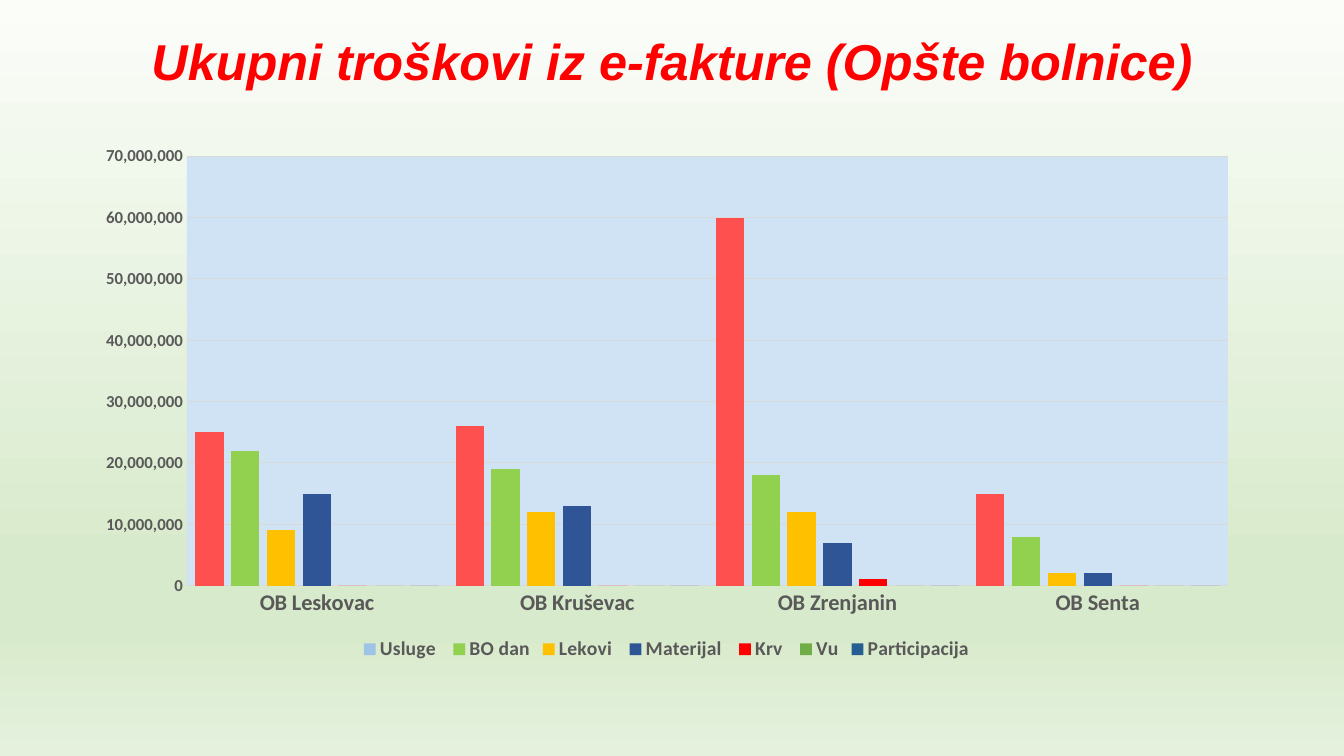
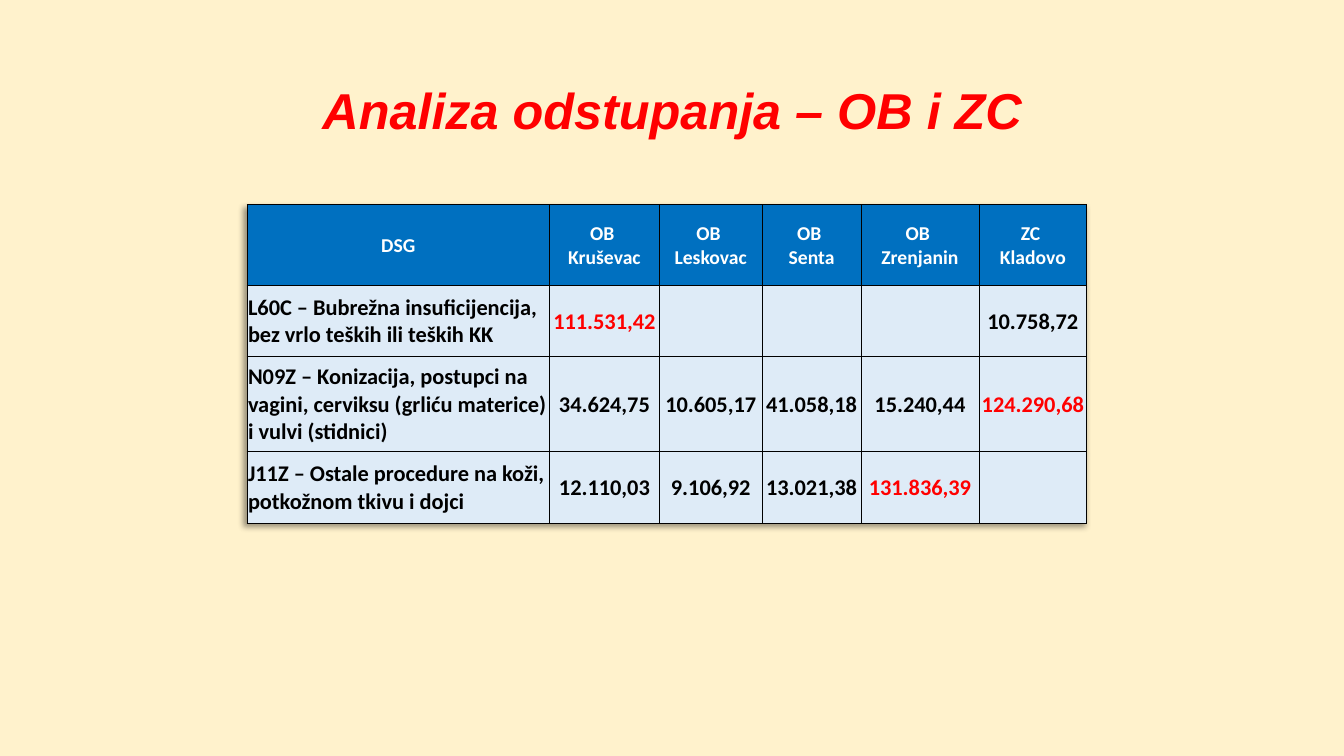
from copy import deepcopy

from pptx import Presentation
from pptx.chart.data import CategoryChartData
from pptx.dml.color import RGBColor
from pptx.enum import chart as charts, text as texts
from pptx.oxml import parse_xml
from pptx.oxml.ns import nsdecls, qn
from pptx.util import Inches, Pt

RED = RGBColor(0xFF, 0x00, 0x00)
WHITE = RGBColor(0xFF, 0xFF, 0xFF)
BLACK = RGBColor(0x00, 0x00, 0x00)
GREY = RGBColor(0x59, 0x59, 0x59)
GRID = RGBColor(0xD9, 0xD9, 0xD9)
CORAL = RGBColor(0xFF, 0x50, 0x50)
PLOT_BLUE = RGBColor(0xD0, 0xE3, 0xF4)
CREAM = RGBColor(0xFF, 0xF2, 0xCC)
HEADER_BLUE = RGBColor(0x00, 0x70, 0xC0)
CELL_BLUE = RGBColor(0xDE, 0xEB, 0xF7)
PALE_GREEN = RGBColor(0xD8, 0xEA, 0xCC)
GREEN_STOPS = [
    (0, RGBColor(0xFB, 0xFD, 0xF9)),
    (0.74, PALE_GREEN),
    (0.83, PALE_GREEN),
    (1, RGBColor(0xE5, 0xF1, 0xDD)),
]
CENTER = texts.PP_ALIGN.CENTER


def write(frame, content, size, color, font="Calibri", italic=False, align=CENTER, spacing=None):
    """Fill a text frame with bold text, one paragraph for each line."""
    frame.word_wrap = True
    frame.vertical_anchor = texts.MSO_ANCHOR.MIDDLE
    for number, line in enumerate(content.split("\n")):
        para = frame.add_paragraph() if number else frame.paragraphs[0]
        para.alignment = align
        para.line_spacing = spacing
        span = para.add_run()
        span.text = line
        span.font.name, span.font.size = font, Pt(size)
        span.font.bold, span.font.italic = True, italic
        span.font.color.rgb = color


def add_title(page, content, top, height):
    box = page.shapes.add_textbox(Inches(0.92), Inches(top), Inches(11.5), Inches(height))
    write(box.text_frame, content, 36, RED, font="Arial", italic=True, spacing=0.9)


deck = Presentation()
deck.slide_width, deck.slide_height = Inches(13.33), Inches(7.5)
blank = deck.slide_layouts[6]

# Costs by hospital
page = deck.slides.add_slide(blank)
backdrop = page.background.fill
backdrop.gradient()
backdrop.gradient_angle = 270
stop_list = page._element.find(".//" + qn("a:gsLst"))
for _ in range(len(GREEN_STOPS) - len(stop_list)):
    stop_list.append(deepcopy(stop_list[0]))
for stop, (position, color) in zip(backdrop.gradient_stops, GREEN_STOPS):
    stop.position = position
    stop.color.rgb = color
add_title(page, "Ukupni troškovi iz e-fakture (Opšte bolnice)", 0.11, 1.05)

MILLION = 1_000_000
COSTS = [
    ("Usluge ", "9DC3E6", (25, 26, 60, 15)),
    ("BO dan", "92D050", (22, 19, 18, 8)),
    ("Lekovi ", "FFC000", (9, 12, 12, 2)),
    ("Materijal ", "2F5597", (15, 13, 7, 2)),
    ("Krv ", "FF0000", (0, 0, 1, 0)),
    ("Vu", "70AD47", (0, 0, 0, 0)),
    ("Participacija", "255E91", (0, 0, 0, 0)),
]
data = CategoryChartData(number_format="#,##0")
data.categories = ["OB Leskovac", "OB Kruševac", "OB Zrenjanin", "OB Senta"]
for name, _, amounts in COSTS:
    data.add_series(name, [amount * MILLION for amount in amounts])
chart = page.shapes.add_chart(
    charts.XL_CHART_TYPE.COLUMN_CLUSTERED,
    Inches(0.81), Inches(1.34), Inches(11.6), Inches(5.26), data,
).chart
chart.has_title = False
chart.font.name, chart.font.size = "Calibri", Pt(10)
chart.has_legend = True
chart.legend.position = charts.XL_LEGEND_POSITION.BOTTOM
chart.legend.include_in_layout = False

for part, size in ((chart.category_axis.tick_labels, 16),
                   (chart.value_axis.tick_labels, 12),
                   (chart.legend, 14)):
    part.font.name, part.font.size, part.font.bold = "Calibri", Pt(size), True
    part.font.color.rgb = GREY
for axis in (chart.category_axis, chart.value_axis):
    axis.major_tick_mark = axis.minor_tick_mark = charts.XL_TICK_MARK.NONE
chart.value_axis.minimum_scale = 0
chart.value_axis.maximum_scale = 70 * MILLION
chart.value_axis.major_unit = 10 * MILLION
chart.value_axis.tick_labels.number_format = "#,##0"
chart.value_axis.tick_labels.number_format_is_linked = False
chart.value_axis.format.line.fill.background()
for line in (chart.category_axis.format.line, chart.value_axis.major_gridlines.format.line):
    line.color.rgb = GRID
    line.width = Pt(0.75)

plot = chart.plots[0]
plot.gap_width, plot.overlap = 60, -27
plot.vary_by_categories = False
for series, (_, color, _) in zip(plot.series, COSTS):
    series.invert_if_negative = False
    series.format.fill.solid()
    series.format.fill.fore_color.rgb = RGBColor.from_string(color)
for index in range(len(data.categories)):
    fill = plot.series[0].points[index].format.fill
    fill.solid()
    fill.fore_color.rgb = CORAL

plot_area = chart._chartSpace.chart.plotArea
for layout in plot_area.findall(qn("c:layout")):
    plot_area.remove(layout)
plot_area.insert(0, parse_xml(
    f'<c:layout {nsdecls("c")}><c:manualLayout><c:layoutTarget val="inner"/>'
    '<c:xMode val="edge"/><c:yMode val="edge"/><c:x val="0.09"/><c:y val="0.04"/>'
    '<c:w val="0.89"/><c:h val="0.81"/></c:manualLayout></c:layout>'))
plot_area.append(parse_xml(
    f'<c:spPr {nsdecls("c", "a")}><a:solidFill><a:srgbClr val="{PLOT_BLUE}"/>'
    '</a:solidFill></c:spPr>'))

# Deviations by diagnosis group
page = deck.slides.add_slide(blank)
page.background.fill.solid()
page.background.fill.fore_color.rgb = CREAM
add_title(page, "Analiza odstupanja – OB i ZC", 0.4, 1.45)

ROWS = [
    ("DSG", "OB \nKruševac", "OB \nLeskovac", "OB \nSenta", "OB \nZrenjanin", "ZC \nKladovo"),
    ("L60C – Bubrežna insuficijencija, bez vrlo teških ili teških KK",
     "111.531,42", "", "", "", "10.758,72"),
    ("N09Z – Konizacija, postupci na vagini, cerviksu (grliću materice) i vulvi (stidnici)",
     "34.624,75", "10.605,17", "41.058,18", "15.240,44", "124.290,68"),
    ("J11Z – Ostale procedure na koži, potkožnom tkivu i dojci",
     "12.110,03", "9.106,92", "13.021,38", "131.836,39", ""),
]
OUTLIERS = {"111.531,42", "124.290,68", "131.836,39"}
WIDTHS = (3, 1.09, 1.02, 0.98, 1.17, 1.07)
HEIGHTS = (0.8, 0.71, 0.94, 0.71)
table = page.shapes.add_table(
    len(ROWS), len(WIDTHS), Inches(2.45), Inches(2.03),
    Inches(sum(WIDTHS)), Inches(sum(HEIGHTS)),
).table
table.horz_banding = False
table._tbl.tblPr.insert(0, parse_xml(
    f'<a:effectLst {nsdecls("a")}><a:outerShdw blurRad="50800" dist="38100" dir="8100000">'
    '<a:srgbClr val="000000"><a:alpha val="40000"/></a:srgbClr></a:outerShdw></a:effectLst>'))
for column, width in zip(table.columns, WIDTHS):
    column.width = Inches(width)
for row, height in zip(table.rows, HEIGHTS):
    row.height = Inches(height)

for r, contents in enumerate(ROWS):
    for c, content in enumerate(contents):
        cell = table.cell(r, c)
        cell.margin_left = cell.margin_right = cell.margin_top = Inches(0.01)
        cell.margin_bottom = 0
        cell.vertical_anchor = texts.MSO_ANCHOR.MIDDLE
        for side in ("lnL", "lnR", "lnT", "lnB"):
            cell._tc.get_or_add_tcPr().append(parse_xml(
                f'<a:{side} {nsdecls("a")} w="{Pt(0.5)}"><a:solidFill>'
                f'<a:srgbClr val="{BLACK}"/></a:solidFill></a:{side}>'))
        cell.fill.solid()
        cell.fill.fore_color.rgb = CELL_BLUE if r else HEADER_BLUE
        if r == 0:
            write(cell.text_frame, content, 14, WHITE)
        elif content:
            write(cell.text_frame, content, 16, RED if content in OUTLIERS else BLACK,
                  align=CENTER if c else texts.PP_ALIGN.LEFT)

deck.save("out.pptx")
